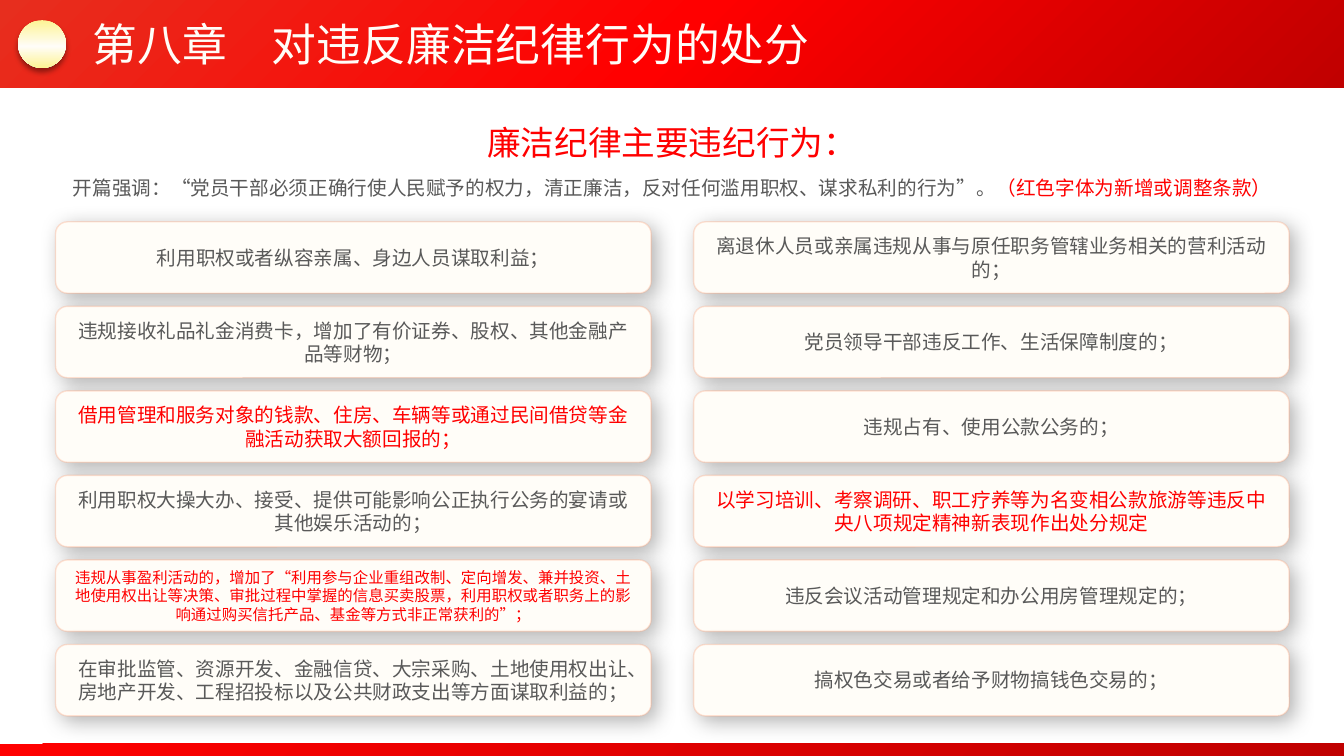
from dataclasses import dataclass

from lxml import etree
from pptx import Presentation
from pptx.dml.color import RGBColor
from pptx.enum.shapes import MSO_SHAPE
from pptx.enum.text import MSO_ANCHOR, MSO_AUTO_SIZE, PP_ALIGN
from pptx.oxml.ns import qn
from pptx.shapes.autoshape import Shape
from pptx.slide import Slide
from pptx.text.text import TextFrame
from pptx.util import Cm, Pt

RECT, ROUND, OVAL = MSO_SHAPE.RECTANGLE, MSO_SHAPE.ROUNDED_RECTANGLE, MSO_SHAPE.OVAL
TOP, MIDDLE = MSO_ANCHOR.TOP, MSO_ANCHOR.MIDDLE
LEFT, CENTER = PP_ALIGN.LEFT, PP_ALIGN.CENTER
NO_FIT = MSO_AUTO_SIZE.NONE

FONT = "Noto Sans CJK SC"
RED = RGBColor(0xFF, 0x00, 0x00)
DARK = RGBColor(0xC0, 0x00, 0x00)
BRICK = RGBColor(0xE7, 0x2E, 0x1E)
CREAM = RGBColor(0xFF, 0xFD, 0xF8)
GOLD = RGBColor(0xFD, 0xF3, 0x94)
PEACH = RGBColor(0xFF, 0xA0, 0x75)
GRAY = RGBColor(0x59, 0x59, 0x59)
BLACK = RGBColor(0x00, 0x00, 0x00)

WIDTH, HEIGHT = 33.87, 19.05
CARD_LEFT, CARD_TOP = 1.4, 5.59
CARD_WIDTH, CARD_HEIGHT = 15.01, 1.8
COL_STEP, ROW_STEP = 16.08, 2.13


@dataclass
class Box:
    left: float
    top: float
    width: float
    height: float

    def place(self) -> tuple[Cm, Cm, Cm, Cm]:
        return Cm(self.left), Cm(self.top), Cm(self.width), Cm(self.height)


@dataclass
class Span:
    text: str
    size: float = 14
    color: RGBColor = GRAY


Stops = list[tuple[int, RGBColor]]

ROWS = [
    (Span("利用职权或者纵容亲属、身边人员谋取利益；"),
     Span("离退休人员或亲属违规从事与原任职务管辖业务相关的营利活动的；")),
    (Span("违规接收礼品礼金消费卡，增加了有价证券、股权、其他金融产品等财物；"),
     Span("党员领导干部违反工作、生活保障制度的；")),
    (Span("借用管理和服务对象的钱款、住房、车辆等或通过民间借贷等金融活动获取大额回报的；", color=RED),
     Span("违规占有、使用公款公务的；")),
    (Span("利用职权大操大办、接受、提供可能影响公正执行公务的宴请或其他娱乐活动的；"),
     Span("以学习培训、考察调研、职工疗养等为名变相公款旅游等违反中央八项规定精神新表现作出处分规定", color=RED)),
    (Span("违规从事盈利活动的，增加了“利用参与企业重组改制、定向增发、兼并投资、"
          "土地使用权出让等决策、审批过程中掌握的信息买卖股票，利用职权或者职务上的影响"
          "通过购买信托产品、基金等方式非正常获利的”；", 11, RED),
     Span("违反会议活动管理规定和办公用房管理规定的；")),
    (Span("在审批监管、资源开发、金融信贷、大宗采购、土地使用权出让、"
          "房地产开发、工程招投标以及公共财政支出等方面谋取利益的；"),
     Span("搞权色交易或者给予财物搞钱色交易的；")),
]


def add_color(parent: etree._Element, color: RGBColor) -> etree._Element:
    return etree.SubElement(parent, qn("a:srgbClr"), val=str(color))


def add_alpha(color: etree._Element, percent: int) -> None:
    etree.SubElement(color, qn("a:alpha"), val=str(percent * 1000))


def blend(shape: Shape, stops: Stops, angle: int) -> None:
    """Fill the shape with a linear gradient; the angle runs clockwise."""
    fill = etree.Element(qn("a:gradFill"), rotWithShape="1")
    marks = etree.SubElement(fill, qn("a:gsLst"))
    for pos, color in stops:
        add_color(etree.SubElement(marks, qn("a:gs"), pos=str(pos * 1000)), color)
    etree.SubElement(fill, qn("a:lin"), ang=str(angle * 60000), scaled="0")
    shape._element.spPr.find(qn("a:prstGeom")).addnext(fill)


def shade(shape: Shape, alpha: int, blur: float, dist: float, angle: int) -> None:
    """Give the shape a soft black outer shadow."""
    effects = shape._element.spPr.find(qn("a:effectLst"))
    outer = etree.SubElement(
        effects, qn("a:outerShdw"), blurRad=str(Pt(blur)), dist=str(Pt(dist)),
        dir=str(angle * 60000), algn="tl", rotWithShape="0")
    add_alpha(add_color(outer, BLACK), alpha)


def add_form(slide: Slide, kind: MSO_SHAPE, box: Box) -> Shape:
    shape = slide.shapes.add_shape(kind, *box.place())
    shape.shadow.inherit = False
    return shape


def add_blend(slide: Slide, kind: MSO_SHAPE, box: Box, stops: Stops, angle: int) -> Shape:
    shape = add_form(slide, kind, box)
    shape.line.fill.background()
    blend(shape, stops, angle)
    return shape


def write(frame: TextFrame, spans: list[Span], align: PP_ALIGN = CENTER,
          anchor: MSO_ANCHOR = TOP, wrap: bool = True) -> None:
    frame.auto_size = NO_FIT
    frame.word_wrap = wrap
    frame.vertical_anchor = anchor
    para = frame.paragraphs[0]
    para.alignment = align
    para._p.get_or_add_pPr().set("hangingPunct", "1")
    for span in spans:
        run = para.add_run()
        run.text = span.text
        run.font.size = Pt(span.size)
        run.font.name = FONT
        run.font.color.rgb = span.color
        latin = run._r.rPr.find(qn("a:latin"))
        latin.addnext(etree.Element(qn("a:ea"), typeface=FONT))


def add_text(slide: Slide, box: Box, spans: list[Span]) -> None:
    write(slide.shapes.add_textbox(*box.place()).text_frame, spans)


def add_card(slide: Slide, box: Box, span: Span) -> None:
    card = add_form(slide, ROUND, box)
    card.fill.solid()
    card.fill.fore_color.rgb = CREAM
    card.line.width = Pt(1)
    card.line.color.rgb = PEACH
    add_alpha(card.line._ln.find(".//" + qn("a:srgbClr")), 30)
    shade(card, 30, 15, 5, 45)
    write(card.text_frame, [span], anchor=MIDDLE)


def set_title(slide: Slide, box: Box, span: Span) -> None:
    """Fill the title and lift it above the header band."""
    title = slide.shapes.title
    title.left, title.top, title.width, title.height = box.place()
    write(title.text_frame, [span], align=LEFT, wrap=False)
    slide.shapes._spTree.append(title._element)


def main() -> None:
    deck = Presentation()
    deck.slide_width, deck.slide_height = Cm(WIDTH), Cm(HEIGHT)
    slide = deck.slides.add_slide(deck.slide_layouts[5])

    add_blend(slide, RECT, Box(0, 18.74, WIDTH, 0.31), [(0, RED), (100, DARK)], 45)
    add_blend(slide, RECT, Box(0, 0, WIDTH, 2.21),
              [(0, BRICK), (50, RED), (100, DARK)], 45)
    badge = add_blend(slide, OVAL, Box(0.46, 0.51, 1.2, 1.2),
                      [(0, GOLD), (55, CREAM), (100, GOLD)], 90)
    shade(badge, 40, 4, 3, 90)
    set_title(slide, Box(2.08, 0.3, 18.75, 1.63),
              Span("第八章　对违反廉洁纪律行为的处分", 32, CREAM))

    add_text(slide, Box(1.4, 4.32, 31.09, 0.86), [
        Span("开篇强调：“党员干部必须正确行使人民赋予的权力，清正廉洁，反对任何滥用职权、谋求私利的行为”。"),
        Span("（红色字体为新增或调整条款）", color=RED)])
    add_text(slide, Box(11.15, 2.95, 11.58, 1.27),
             [Span("廉洁纪律主要违纪行为：", 24, RED)])

    for row, pair in enumerate(ROWS):
        for col, span in enumerate(pair):
            add_card(slide, Box(CARD_LEFT + col * COL_STEP, CARD_TOP + row * ROW_STEP,
                                CARD_WIDTH, CARD_HEIGHT), span)
    deck.save("out.pptx")


if __name__ == "__main__":
    main()
